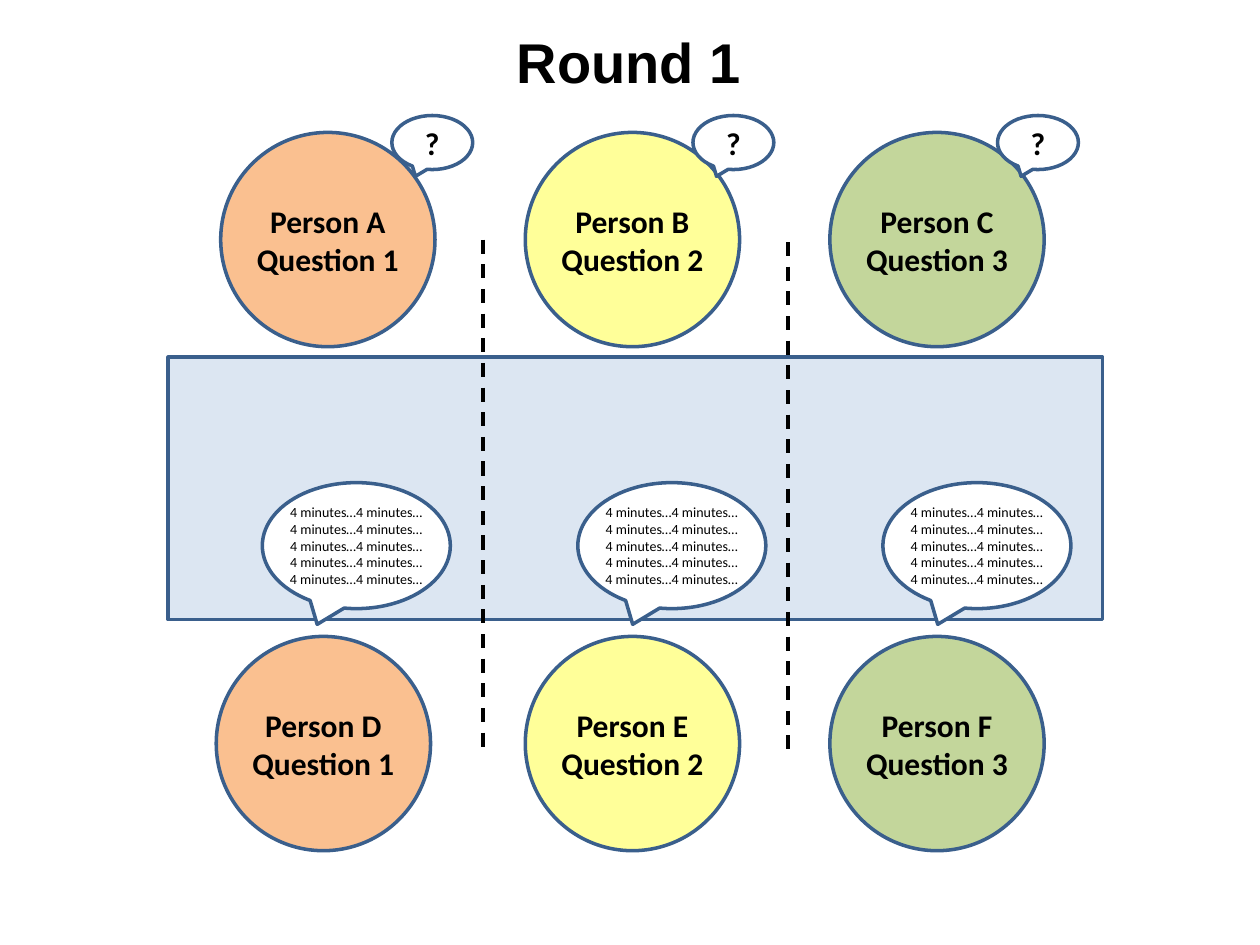
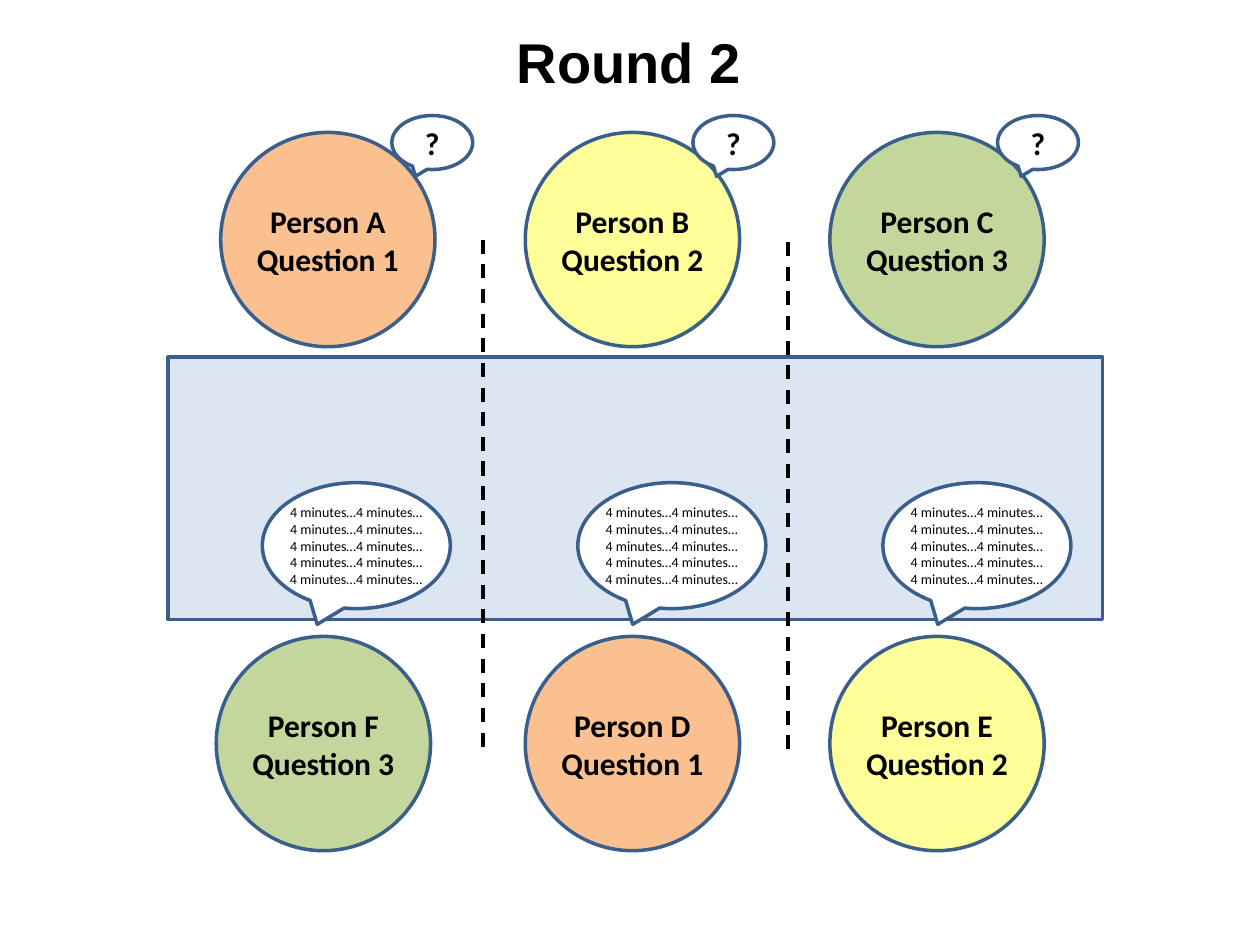
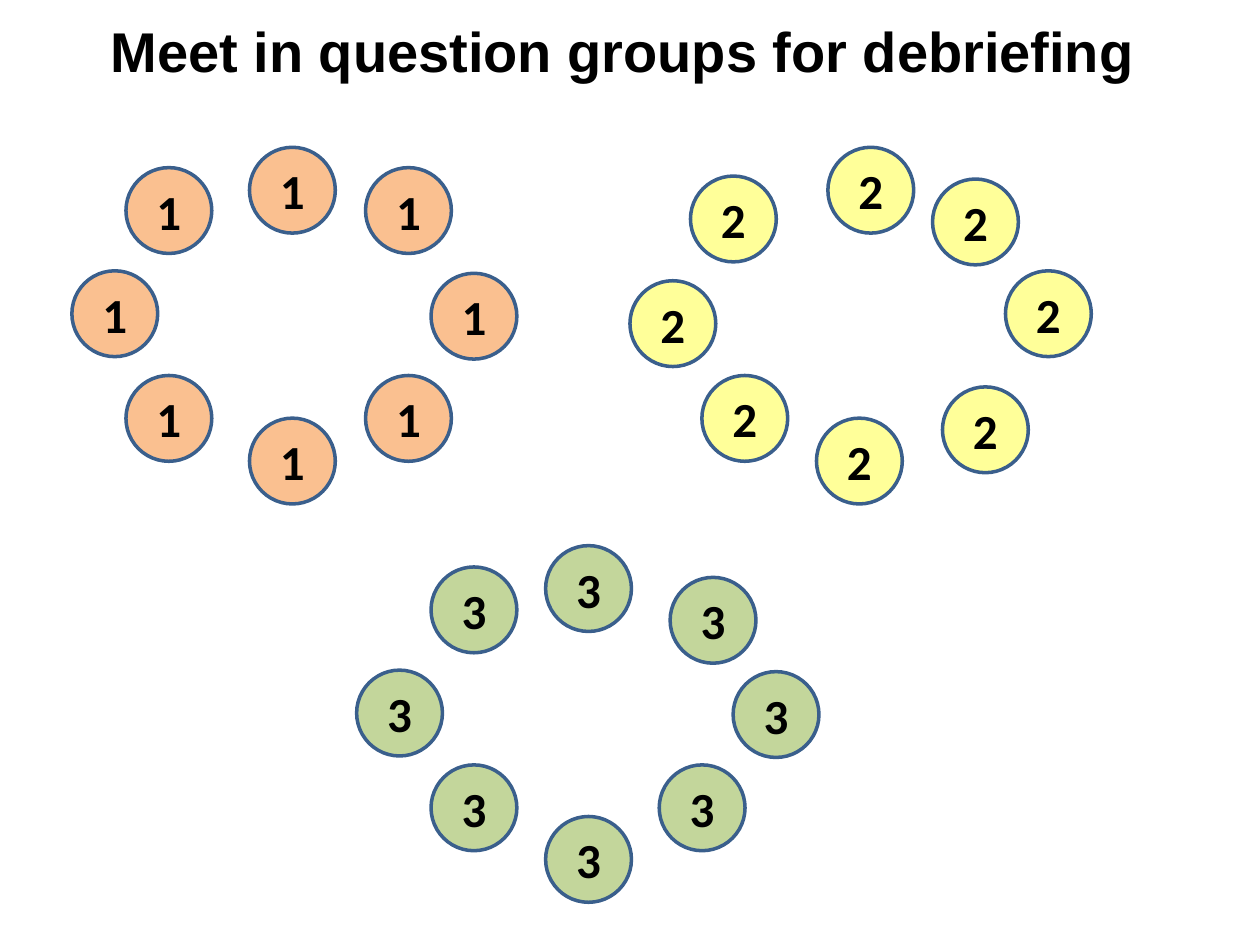
import pptx
import pptx.util
import pptx.dml.color
import pptx.enum.dml
import pptx.enum.shapes
import pptx.enum.text
import pptx.oxml.ns
import lxml.etree

Cm = pptx.util.Cm
Pt = pptx.util.Pt
SHAPE = pptx.enum.shapes.MSO_SHAPE

OUTLINE = "3A5F8C"
BLACK = "000000"
WHITE = "FFFFFF"
TABLE_FILL = "DCE6F2"
QUESTION_FILLS = {1: "FAC090", 2: "FFFF99", 3: "C3D69B"}
QUESTION_OF = {"A": 1, "B": 2, "C": 3, "D": 1, "E": 2, "F": 3}

SEAT_SIZE = 4.32
SEAT_STEP = 6.14
MEMBER_SIZE = 1.73
BOARD_BOX = (3.39, 2.33, 18.84, 14.82)

RINGS = [
    (1, (1.45, 2.97), [(1.09, 0.41), (3.58, 0), (5.92, 0.41), (7.24, 2.54),
                       (5.92, 4.6), (3.58, 5.46), (1.09, 4.6), (0, 2.49)]),
    (2, (12.7, 2.97), [(1.22, 0.58), (3.99, 0), (6.1, 0.64), (7.57, 2.49),
                       (6.3, 4.83), (3.76, 5.46), (1.45, 4.6), (0, 2.69)]),
    (3, (7.19, 11), [(1.5, 0.43), (3.81, 0), (6.32, 0.64), (7.59, 2.54),
                     (6.1, 4.42), (3.81, 5.46), (1.5, 4.42), (0, 2.51)]),
]


def rgb(value):
    return pptx.dml.color.RGBColor.from_string(value)


def write(tf, text, size, bold, font="Calibri", align=None):
    tf.text = text
    for p in tf.paragraphs:
        p.alignment = align
        for r in p.runs:
            r.font.name = font
            r.font.size = Pt(size)
            r.font.bold = bold
            r.font.color.rgb = rgb(BLACK)


def add_outlined(shapes, kind, box, fill):
    sp = shapes.add_shape(kind, *(Cm(v) for v in box))
    sp.shadow.inherit = False
    sp.fill.solid()
    sp.fill.fore_color.rgb = rgb(fill)
    sp.line.color.rgb = rgb(OUTLINE)
    sp.line.width = Pt(2)
    return sp


def add_labelled(shapes, kind, box, fill, text, size, bold=True, wrap=False, inset=0):
    sp = add_outlined(shapes, kind, box, fill)
    tf = sp.text_frame
    tf.word_wrap = wrap
    tf.vertical_anchor = pptx.enum.text.MSO_ANCHOR.MIDDLE
    tf.margin_left = tf.margin_right = Cm(inset)
    tf.margin_top = tf.margin_bottom = Cm(inset / 2)
    write(tf, text, size, bold, align=pptx.enum.text.PP_ALIGN.CENTER)


def add_title(s, text, box):
    tb = s.shapes.add_textbox(*(Cm(v) for v in box))
    tf = tb.text_frame
    tf.word_wrap = False
    tf.auto_size = pptx.enum.text.MSO_AUTO_SIZE.SHAPE_TO_FIT_TEXT
    write(tf, text, 32, True, "Arial")


def add_person(s, x, y, person):
    question = QUESTION_OF[person]
    add_labelled(s.shapes, SHAPE.OVAL, (x, y, SEAT_SIZE, SEAT_SIZE),
                 QUESTION_FILLS[question], f"Person {person}\nQuestion {question}", 18)


def add_divider(s, x, y, length):
    line = s.shapes.add_connector(pptx.enum.shapes.MSO_CONNECTOR.STRAIGHT,
                                  Cm(x), Cm(y), Cm(x), Cm(y + length))
    line.line.color.rgb = rgb(BLACK)
    line.line.width = Pt(2)
    line.line.dash_style = pptx.enum.dml.MSO_LINE.DASH
    lxml.etree.SubElement(line.element.spPr, pptx.oxml.ns.qn("a:effectLst"))


def add_board(s, box, askers, answerers):
    left, top, width, height = box
    add_outlined(s.shapes, SHAPE.RECTANGLE, (left, top + 4.87, width, 5.29), TABLE_FILL)
    for i, person in enumerate(askers):
        add_person(s, left + 1.06 + i * SEAT_STEP, top + 0.34, person)
    for x, person in zip((0.97, 7.2, 13.34), answerers):
        add_person(s, left + x, top + height - SEAT_SIZE, person)
    for x in (4.51, 10.58, 16.72):
        add_labelled(s.shapes, SHAPE.OVAL_CALLOUT, (left + x, top, 1.63, 1.09),
                     WHITE, "?", 18, wrap=True, inset=0.25)
    for x in (1.9, 8.26, 14.41):
        add_labelled(s.shapes, SHAPE.OVAL_CALLOUT, (left + x, top + 7.4, 3.79, 2.54),
                     WHITE, "4 minutes…" * 10, 8, bold=False, wrap=True)
    for x, y in ((6.35, 2.5), (12.49, 2.55)):
        add_divider(s, left + x, top + y, 10.41)


def add_ring(s, question, origin, offsets):
    left, top = origin
    group = s.shapes.add_group_shape()
    for x, y in offsets:
        add_labelled(group.shapes, SHAPE.OVAL,
                     (left + x, top + y, MEMBER_SIZE, MEMBER_SIZE),
                     QUESTION_FILLS[question], str(question), 28)


def round_slide(prs, number, answerers):
    s = prs.slides.add_slide(prs.slide_layouts[6])
    add_title(s, f"Round {number}", (10.17, 0.43, 5.05, 1.63))
    add_board(s, BOARD_BOX, "ABC", answerers)


def debrief_slide(prs):
    s = prs.slides.add_slide(prs.slide_layouts[6])
    add_title(s, "Meet in question groups for debriefing", (1.98, 0.2, 21.31, 1.63))
    for question, origin, offsets in RINGS:
        add_ring(s, question, origin, offsets)


def main():
    prs = pptx.Presentation()
    prs.slide_width = Cm(25.4)
    prs.slide_height = Cm(19.05)
    for number, answerers in enumerate(("DEF", "FDE"), start=1):
        round_slide(prs, number, answerers)
    debrief_slide(prs)
    prs.save("out.pptx")


if __name__ == "__main__":
    main()
